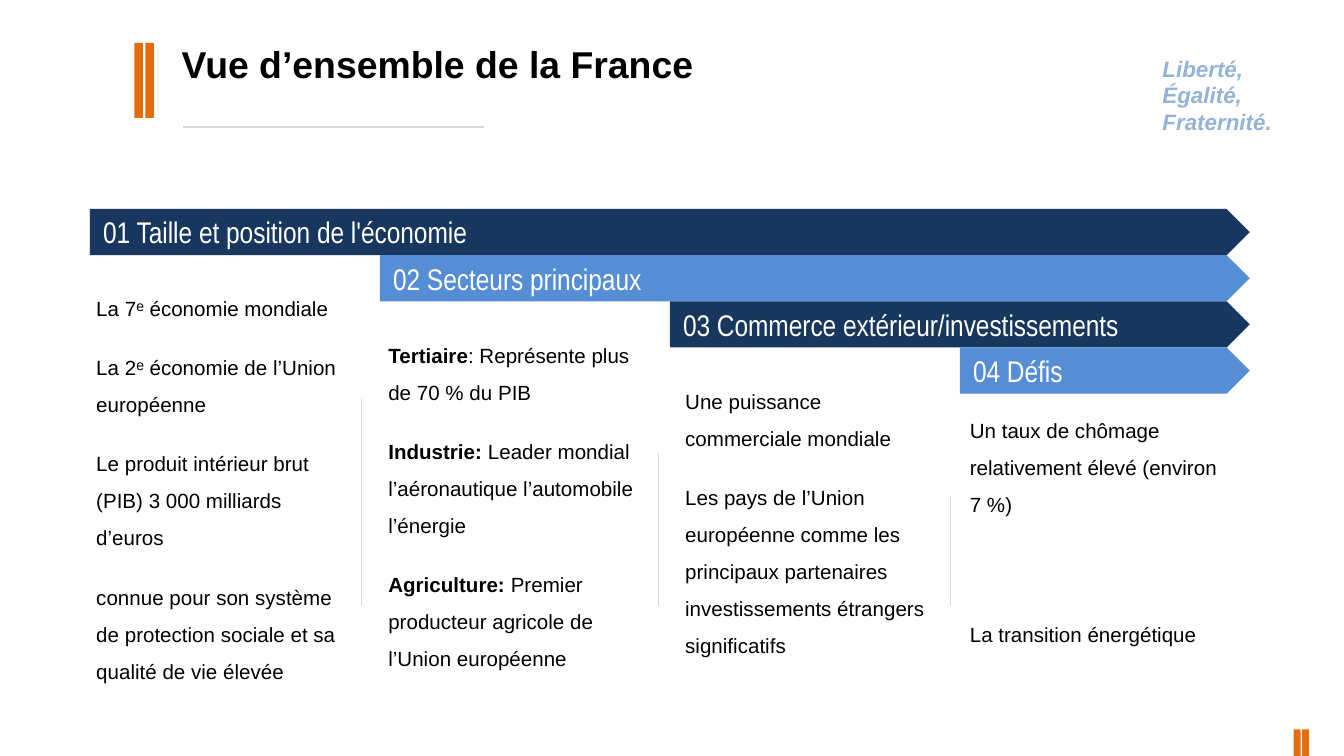
from lxml import etree
from pptx import Presentation
from pptx.dml.color import RGBColor
from pptx.enum.shapes import MSO_CONNECTOR, MSO_SHAPE
from pptx.enum.text import MSO_ANCHOR, MSO_AUTO_SIZE, PP_ALIGN
from pptx.oxml.ns import qn
from pptx.util import Cm, Pt

STRAIGHT = MSO_CONNECTOR.STRAIGHT
PENTAGON, RECTANGLE = MSO_SHAPE.PENTAGON, MSO_SHAPE.RECTANGLE
TOP, MIDDLE = MSO_ANCHOR.TOP, MSO_ANCHOR.MIDDLE
FIT_SHAPE, NO_FIT = MSO_AUTO_SIZE.SHAPE_TO_FIT_TEXT, MSO_AUTO_SIZE.NONE
LEFT, JUSTIFY = PP_ALIGN.LEFT, PP_ALIGN.JUSTIFY

NAVY, BLUE, PALE_BLUE = "17375E", "558ED5", "95B3D7"
ORANGE, GREY, BLACK, WHITE = "E46C0A", "D9D9D9", "000000", "FFFFFF"

HEADINGS = [
    "01 Taille et position de l'économie",
    "02 Secteurs principaux",
    "03 Commerce extérieur/investissements",
    "04 Défis",
]

# Each column: box in cm, then paragraphs as (bold lead, text, space before, space after)
COLUMNS = [
    ((1.57, 5.23, 5.26, 7.8), [
        ("", "La 7ᵉ économie mondiale", 0, 12),
        ("", "La 2ᵉ économie de l’Union européenne", 0, 12),
        ("", "Le produit intérieur brut (PIB) 3 000 milliards d’euros", 0, 12),
        ("", "connue pour son système de protection sociale et sa qualité de vie élevée", 0, 0),
    ]),
    ((7.09, 6.12, 5.26, 6.68), [
        ("Tertiaire", ": Représente plus de 70 % du PIB", 0, 12),
        ("Industrie: ", "Leader mondial l’aéronautique l’automobile l’énergie", 0, 12),
        ("Agriculture: ", "Premier producteur agricole de l’Union européenne", 0, 0),
    ]),
    ((12.7, 6.99, 5.26, 5.54), [
        ("", "Une puissance commerciale mondiale", 0, 12),
        ("", "Les pays de l’Union européenne comme les principaux partenaires", 0, 0),
        ("", "investissements étrangers significatifs", 0, 0),
    ]),
    ((18.08, 7.54, 5.26, 4.78), [
        ("", "Un taux de chômage relativement élevé (environ 7 %)", 0, 12),
        ("", "La transition énergétique", 38, 0),
    ]),
]
DIVIDERS = [(6.83, 7.54), (12.45, 8.56), (17.96, 9.37)]
DIVIDER_BOTTOM = 11.46


def rgb(value):
    return RGBColor.from_string(value)


def cm_box(box):
    return [Cm(length) for length in box]


def set_font(font, size, color, name="Arial", bold=None, italic=None):
    font.name, font.size = name, Pt(size)
    font.color.rgb = rgb(color)
    font.bold, font.italic = bold, italic


def add_filled(shapes, kind, box, color):
    shape = shapes.add_shape(kind, *cm_box(box))
    shape.shadow.inherit = False
    shape.fill.solid()
    shape.fill.fore_color.rgb = rgb(color)
    shape.line.fill.background()
    return shape


def add_rule(page, start, end):
    rule = page.shapes.add_connector(STRAIGHT, *cm_box(start + end))
    rule.line.color.rgb = rgb(GREY)
    rule.line.width = Pt(0.75)
    etree.SubElement(rule._element.spPr, qn("a:effectLst"))


def add_text_box(page, box):
    frame = page.shapes.add_textbox(*cm_box(box)).text_frame
    frame.word_wrap = True
    frame.auto_size = FIT_SHAPE
    return frame


def add_double_bar(page, box, bar_width):
    """Two upright bars at the left and right edges of the box."""
    left, top, width, height = box
    pair = page.shapes.add_group_shape()
    for bar_left in (left, left + width - bar_width):
        add_filled(pair.shapes, RECTANGLE, (bar_left, top, bar_width, height), ORANGE)


def add_header(page, box):
    left, top, width, height = box
    add_double_bar(page, (left, top + 0.15, 0.37, 1.42), 0.16)
    add_rule(page, (left + 0.92, top + 1.74), (left + 6.6, top + 1.74))

    title = page.shapes.title
    title.left, title.top, title.width, title.height = cm_box((left + 0.64, top, 10.92, height))
    frame = title.text_frame
    frame.text = "Vue d’ensemble de la France"
    frame.vertical_anchor, frame.auto_size = TOP, NO_FIT
    para = frame.paragraphs[0]
    para.alignment = LEFT
    set_font(para.font, 20, BLACK, bold=True)

    motto_width = 2.64
    motto = add_text_box(page, (left + width - motto_width, top + 0.25, motto_width, 1.8))
    para = motto.paragraphs[0]
    para.text = "Liberté, Égalité, Fraternité."
    para.alignment = JUSTIFY
    set_font(para.font, 12, PALE_BLUE, bold=True, italic=True)


def add_arrow_stairs(page, box):
    """Arrows that share the right edge, each starting one step further right."""
    left, top, width, height = box
    step, row = width / len(HEADINGS), height / len(HEADINGS)
    for index, heading in enumerate(HEADINGS):
        shift = index * step
        arrow_box = (left + shift, top + index * row, width - shift, row)
        arrow = add_filled(page.shapes, PENTAGON, arrow_box, (NAVY, BLUE)[index % 2])
        frame = arrow.text_frame
        frame.vertical_anchor, frame.word_wrap = MIDDLE, True
        para = frame.paragraphs[0]
        para.text = heading
        para.alignment = LEFT
        set_font(para.font, 16, WHITE, "Arial Narrow")


def add_column(page, box, entries):
    frame = add_text_box(page, box)
    for index, (lead, text, before, after) in enumerate(entries):
        para = frame.add_paragraph() if index else frame.paragraphs[0]
        para.line_spacing = 1.5
        para.space_before, para.space_after = Pt(before), Pt(after)
        set_font(para.font, 11, BLACK)
        if lead:
            span = para.add_run()
            span.text = lead
            span.font.bold = True
        para.add_run().text = text


def main():
    deck = Presentation()
    deck.slide_width, deck.slide_height = Cm(25.4), Cm(14.29)
    page = deck.slides.add_slide(deck.slide_layouts[5])
    add_header(page, (2.54, 0.66, 21.82, 1.96))
    add_arrow_stairs(page, (1.7, 3.95, 21.92, 3.49))
    for box, entries in COLUMNS:
        add_column(page, box, entries)
    for left, top in DIVIDERS:
        add_rule(page, (left, top), (left, DIVIDER_BOTTOM))
    add_double_bar(page, (24.45, 13.79, 0.29, 0.5), 0.13)
    deck.save("out.pptx")


if __name__ == "__main__":
    main()
